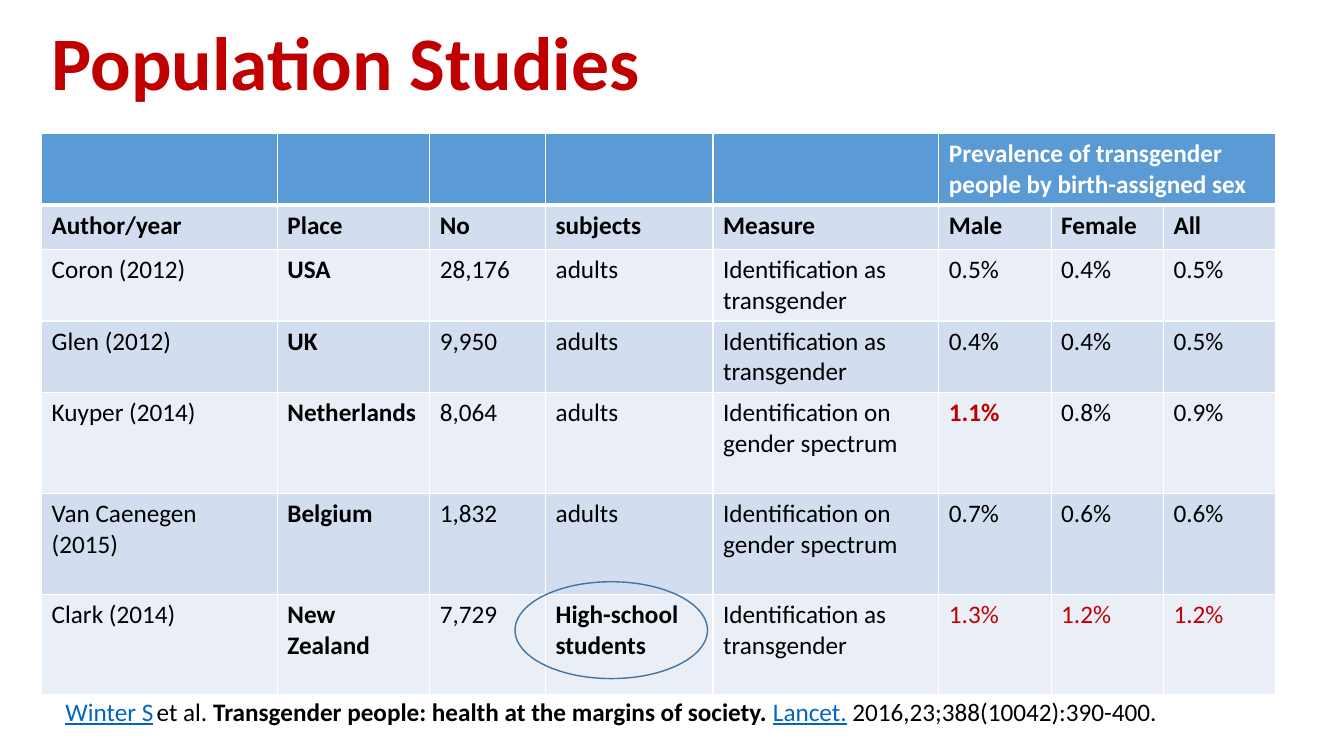
from pptx import Presentation
from pptx.dml.color import RGBColor
from pptx.enum.shapes import MSO_SHAPE as Shape
from pptx.enum.text import MSO_ANCHOR as Anchor, PP_ALIGN as Align
from pptx.oxml import parse_xml
from pptx.oxml.ns import nsdecls
from pptx.util import Cm, Pt

FONT = "Calibri"
RED, BLACK, WHITE, LINK = "C00000", "000000", "FFFFFF", "0563C1"
HEADER, BAND_DARK, BAND_LIGHT = "5B9BD5", "D2DEEF", "EAEFF7"

COLUMN_WIDTHS = [5.94, 3.84, 2.92, 4.22, 5.69, 2.83, 2.83, 2.83]
ROW_HEIGHTS = [1.78, 1.12, 1.78, 1.78, 2.54, 2.54, 2.54]
PREVALENCE = "Prevalence of transgender people by birth-assigned sex"
HEADINGS = ["Author/year", "Place", "No", "subjects", "Measure", "Male", "Female", "All"]
AS_TRANSGENDER = "Identification as transgender"
ON_SPECTRUM = "Identification on gender spectrum"
STUDIES = [
    ["Coron (2012)", "USA", "28,176", "adults", AS_TRANSGENDER, "0.5%", "0.4%", "0.5%"],
    ["Glen (2012)", "UK", "9,950", "adults", AS_TRANSGENDER, "0.4%", "0.4%", "0.5%"],
    ["Kuyper (2014)", "Netherlands", "8,064", "adults", ON_SPECTRUM, "1.1%", "0.8%", "0.9%"],
    ["Van Caenegen (2015)", "Belgium", "1,832", "adults", ON_SPECTRUM, "0.7%", "0.6%", "0.6%"],
    ["Clark (2014)", "New Zealand", "7,729", "High-school students", AS_TRANSGENDER,
     "1.3%", "1.2%", "1.2%"],
]
BOLD_VALUES = {"1.1%", "High-school students"}
RED_VALUES = {"1.1%", "1.3%", "1.2%"}


def color(value):
    return RGBColor.from_string(value)


def set_font(font, size, fill, bold=False):
    font.name, font.size, font.bold = FONT, Pt(size), bold
    font.color.rgb = color(fill)


def place(shape, box):
    shape.left, shape.top, shape.width, shape.height = map(Cm, box)


def outline_xml(tag, width, fill):
    return parse_xml(f'<a:{tag} {nsdecls("a")} w="{Pt(width)}"><a:solidFill>'
                     f'<a:srgbClr val="{fill}"/></a:solidFill></a:{tag}>')


def add_title(slide, box):
    title = slide.shapes.title
    place(title, box)
    frame = title.text_frame
    frame.word_wrap = False
    frame.vertical_anchor = Anchor.MIDDLE
    para = frame.paragraphs[0]
    para.alignment, para.line_spacing = Align.CENTER, 1.0
    span = para.add_run()
    span.text = "Population Studies"
    set_font(span.font, 54, RED, True)
    # Text outline
    span.font._element.insert(0, outline_xml("ln", 1, RED))


def style_cell(cell, text, fill, ink, bold, bottom=1):
    # Borders come before the fill in the cell properties
    properties = cell._tc.get_or_add_tcPr()
    for tag, width in (("lnL", 1), ("lnR", 1), ("lnT", 1), ("lnB", bottom)):
        properties.append(outline_xml(tag, width, WHITE))
    cell.fill.solid()
    cell.fill.fore_color.rgb = color(fill)
    para = cell.text_frame.paragraphs[0]
    if text:
        para.text = text
    set_font(para.font, 18, ink, bold)


def add_studies(slide, box):
    frame = slide.shapes.add_table(len(ROW_HEIGHTS), len(COLUMN_WIDTHS), *map(Cm, box))
    table = frame.table
    for column, width in zip(table.columns, COLUMN_WIDTHS):
        column.width = Cm(width)
    for row, height in zip(table.rows, ROW_HEIGHTS):
        row.height = Cm(height)

    # Header band
    for index in range(len(COLUMN_WIDTHS)):
        text = PREVALENCE if index == 5 else ""
        style_cell(table.cell(0, index), text, HEADER, WHITE, True, bottom=3)
    table.cell(0, 5).merge(table.cell(0, 7))

    # Headings and studies in alternating bands
    for row_index, values in enumerate([HEADINGS, *STUDIES], start=1):
        fill = BAND_DARK if row_index % 2 else BAND_LIGHT
        for index, text in enumerate(values):
            bold = row_index == 1 or index == 1 or text in BOLD_VALUES
            ink = RED if text in RED_VALUES else BLACK
            style_cell(table.cell(row_index, index), text, fill, ink, bold)


def add_citation(slide, box):
    frame = slide.shapes.add_textbox(*map(Cm, box)).text_frame
    frame.word_wrap = True
    para = frame.paragraphs[0]
    for text, ink, bold in [
        ("Winter S", LINK, False),
        (" ", BLACK, False),
        ("et al. ", BLACK, False),
        ("Transgender people: health at the margins of society. ", BLACK, True),
        ("Lancet.", LINK, False),
        (" 2016,23;388(10042):390-400.", BLACK, False),
    ]:
        span = para.add_run()
        span.text = text
        set_font(span.font, 18, ink, bold)
        span.font.underline = ink == LINK
        if text == " ":  # superscript gap
            span.font._element.set("baseline", "30000")


def add_highlight(slide, box):
    ring = slide.shapes.add_shape(Shape.OVAL, *map(Cm, box))
    ring.shadow.inherit = False
    ring.fill.background()
    ring.line.color.rgb = color("43739E")
    ring.line.width = Pt(1)


def main():
    deck = Presentation()
    deck.slide_width, deck.slide_height = Cm(33.87), Cm(19.05)
    slide = deck.slides.add_slide(deck.slide_layouts[5])
    add_studies(slide, (1.05, 3.36, 31.1, 14.08))
    add_citation(slide, (1.4, 17.42, 31.45, 1.02))
    add_title(slide, (0.97, 0.23, 15.49, 2.57))
    add_highlight(slide, (12.98, 14.66, 4.85, 2.44))
    deck.save("out.pptx")


if __name__ == "__main__":
    main()
